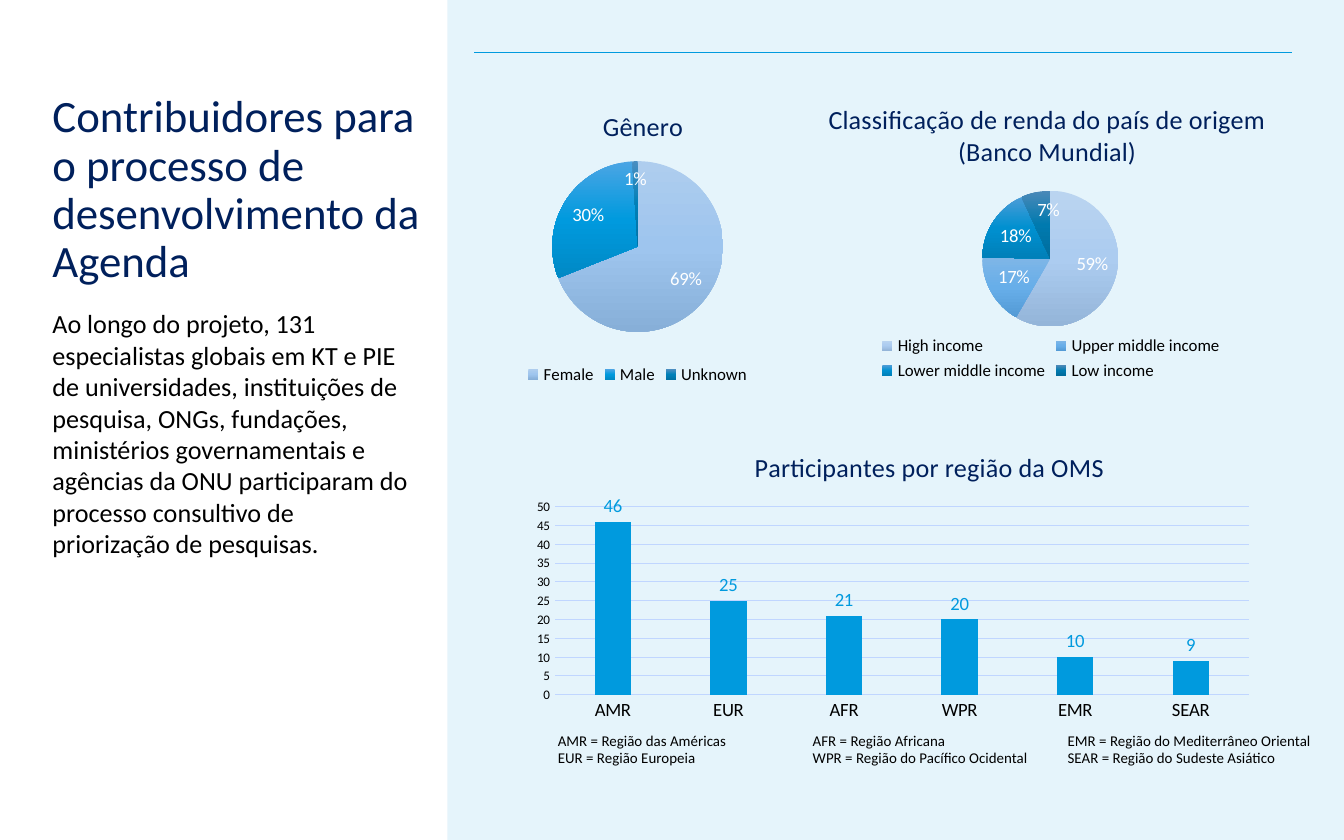
import pptx
import pptx.chart.data
import pptx.dml.color
import pptx.enum.chart
import pptx.enum.shapes
import pptx.enum.text
import pptx.oxml
import pptx.oxml.ns
import pptx.util
from lxml import etree

Inches = pptx.util.Inches
Pt = pptx.util.Pt
RGBColor = pptx.dml.color.RGBColor
XL = pptx.enum.chart
qn = pptx.oxml.ns.qn

FONT = "Calibri"
WHITE = RGBColor(0xFF, 0xFF, 0xFF)
BLACK = RGBColor(0, 0, 0)
NAVY = RGBColor(0x00, 0x20, 0x5C)
BLUE = RGBColor(0x00, 0x9A, 0xDE)
PALE = RGBColor(0xE5, 0xF4, 0xFB)
GRID = RGBColor(0xC0, 0xD6, 0xFF)

# Slice gradients: top, middle and bottom colour
GENDER_FILLS = [("AECDEE", "9EC5EE", "87AFD8"), ("4BA5E4", "009ADE", "0089C5"),
                ("4B8EC1", "0080B8", "0071A4")]
INCOME_FILLS = [("BAD4F0", "ACCCF0", "94B5D9"), ("7FB6E7", "67AEE9", "549BD6"),
                ("4B9CD7", "0090D0", "0080B9"), ("4B89B8", "007AAF", "006C9C")]
REGIONS = ["AMR = Região das Américas", "EUR = Região Europeia",
           "AFR = Região Africana", "WPR = Região do Pacífico Ocidental",
           "EMR = Região do Mediterrâneo Oriental", "SEAR = Região do Sudeste Asiático"]


def set_font(font, size, color):
    font.name, font.size, font.bold = FONT, Pt(size), False
    font.color.rgb = color


def place(sp, box):
    sp.left, sp.top, sp.width, sp.height = (Inches(v) for v in box)


def prepare_frame(tf):
    tf.margin_left = tf.margin_right = tf.margin_top = tf.margin_bottom = 0
    tf.word_wrap = True
    tf.auto_size = pptx.enum.text.MSO_AUTO_SIZE.NONE
    tf.vertical_anchor = pptx.enum.text.MSO_ANCHOR.TOP


def fill_placeholder(sp, box, text, size, color):
    place(sp, box)
    tf = sp.text_frame
    tf.text = text
    prepare_frame(tf)
    p = tf.paragraphs[0]
    p.alignment = pptx.enum.text.PP_ALIGN.LEFT
    p.space_before = Pt(0)
    set_font(p.runs[0].font, size, color)
    return p


def add_backdrop(s, box):
    s.background.fill.solid()
    s.background.fill.fore_color.rgb = PALE
    # White panel, sent behind the placeholders
    sp = s.shapes.add_shape(pptx.enum.shapes.MSO_SHAPE.RECTANGLE, *(Inches(v) for v in box))
    sp.shadow.inherit = False
    sp.fill.solid()
    sp.fill.fore_color.rgb = WHITE
    sp.line.fill.background()
    s.shapes._spTree.insert(2, sp._element)
    # Rule above the charts
    rule = s.shapes.add_connector(pptx.enum.shapes.MSO_CONNECTOR.STRAIGHT,
                                  Inches(3.53), Inches(0.39), Inches(9.61), Inches(0.39))
    rule.line.color.rgb = BLUE
    rule.line.width = Pt(0.5)
    etree.SubElement(rule._element.spPr, qn("a:effectLst"))


def add_intro(s, left):
    title = fill_placeholder(s.shapes.title, (left, 0.7, 2.85, 2.04),
                             "Contribuidores para o processo de desenvolvimento da Agenda",
                             24, NAVY)
    title.line_spacing = 0.9
    body = fill_placeholder(
        s.placeholders[1], (left, 2.29, 2.65, 2.03),
        "Ao longo do projeto, 131 especialistas globais em KT e PIE de universidades, "
        "instituições de pesquisa, ONGs, fundações, ministérios governamentais e agências "
        "da ONU participaram do processo consultivo de priorização de pesquisas.", 14, BLACK)
    body.space_after = Pt(10)


def layout_xml(box, parts, inner=False):
    """Manual chart layout; parts holds x, y and optionally w, h in inches."""
    left, top, width, height = box
    x, y = parts[:2]
    values = {"x": (x - left) / width, "y": (y - top) / height}
    if inner:
        values.update(w=parts[2] / width, h=parts[3] / height)
    layout = etree.Element(qn("c:layout"))
    manual = etree.SubElement(layout, qn("c:manualLayout"))
    if inner:
        etree.SubElement(manual, qn("c:layoutTarget")).set("val", "inner")
    for axis in "xy":
        etree.SubElement(manual, qn(f"c:{axis}Mode")).set("val", "edge")
    for name, value in values.items():
        etree.SubElement(manual, qn(f"c:{name}")).set("val", f"{value:.4f}")
    return layout


def add_chart(s, box, kind, title, title_at, plot, cats, vals):
    data = pptx.chart.data.CategoryChartData()
    data.categories = cats
    data.add_series("Series 1", vals)
    chart = s.shapes.add_chart(kind, *(Inches(v) for v in box), data).chart
    set_font(chart.font, 10, NAVY)
    chart.has_title = True
    tf = chart.chart_title.text_frame
    tf.text = title
    set_font(tf.paragraphs[0].runs[0].font, 14, NAVY)

    # Fixed places for the title and the plot
    title_el = chart.chart_title._element
    plot_el = chart._chartSpace.chart.plotArea
    for el in (title_el, plot_el):
        for old in el.findall(qn("c:layout")):
            el.remove(old)
    title_el.find(qn("c:tx")).addnext(layout_xml(box, title_at))
    plot_el.insert(0, layout_xml(box, plot, inner=True))
    return chart


def set_labels(chart, position, color, number_format):
    plot = chart.plots[0]
    plot.has_data_labels = True
    labels = plot.data_labels
    labels.show_value = True
    labels.number_format = number_format
    labels.number_format_is_linked = False
    labels.position = position
    set_font(labels.font, 10, color)


def gradient_fill(point, colors):
    stops = "".join(f'<a:gs pos="{i * 50000}"><a:srgbClr val="{c}"/></a:gs>'
                    for i, c in enumerate(colors))
    grad = pptx.oxml.parse_xml(
        f'<a:gradFill {pptx.oxml.ns.nsdecls("a")} rotWithShape="1"><a:gsLst>{stops}</a:gsLst>'
        '<a:lin ang="5400000" scaled="0"/></a:gradFill>')
    point.format.line.fill.background()
    point.format._element.get_or_add_spPr().insert(0, grad)


def add_pie(s, box, title, title_at, plot, cats, vals, fills):
    chart = add_chart(s, box, XL.XL_CHART_TYPE.PIE, title, title_at, plot, cats, vals)
    set_labels(chart, XL.XL_LABEL_POSITION.INSIDE_END, WHITE, '0"%"')
    for i, colors in enumerate(fills):
        gradient_fill(chart.plots[0].series[0].points[i], colors)
    chart.has_legend = True
    chart.legend.position = XL.XL_LEGEND_POSITION.BOTTOM
    chart.legend.include_in_layout = False
    set_font(chart.legend.font, 9, BLACK)


def add_region_bars(s, box):
    chart = add_chart(s, box, XL.XL_CHART_TYPE.COLUMN_CLUSTERED,
                      "Participantes por região da OMS", (5.58, 3.31),
                      (4.13, 3.77, 5.16, 1.4),
                      ["AMR", "EUR", "AFR", "WPR", "EMR", "SEAR"], [46, 25, 21, 20, 10, 9])
    chart.has_legend = False
    set_labels(chart, XL.XL_LABEL_POSITION.OUTSIDE_END, BLUE, "0")
    plot = chart.plots[0]
    plot.gap_width, plot.overlap, plot.vary_by_categories = 219, -27, False
    fill = plot.series[0].format.fill
    fill.solid()
    fill.fore_color.rgb = BLUE
    # Axes
    cat, val = chart.category_axis, chart.value_axis
    for axis, size in ((cat, 10), (val, 7)):
        axis.major_tick_mark = axis.minor_tick_mark = XL.XL_TICK_MARK.NONE
        set_font(axis.tick_labels.font, size, BLACK)
    val.minimum_scale, val.maximum_scale, val.major_unit = 0, 50, 5
    val.format.line.fill.background()
    for line, width in ((cat.format.line, 0.75), (val.major_gridlines.format.line, 0.5)):
        line.color.rgb = GRID
        line.width = Pt(width)


def add_region_key(s, box):
    tf = s.shapes.add_textbox(*(Inches(v) for v in box)).text_frame
    tf.text = "\n".join(REGIONS)
    prepare_frame(tf)
    tf._txBody.bodyPr.set("numCol", "3")
    for p in tf.paragraphs:
        set_font(p.runs[0].font, 8, BLACK)


def main():
    prs = pptx.Presentation()
    prs.slide_width, prs.slide_height = Inches(10), Inches(6.25)
    s = prs.slides.add_slide(prs.slide_layouts[0])
    add_backdrop(s, (0, 0, 3.33, 6.25))
    add_intro(s, 0.39)
    add_pie(s, (3.56, 0.61, 2.37, 2.29), "Gênero", (4.45, 0.77), (4.11, 1.2, 1.27, 1.27),
            ["Female", "Male", "Unknown"], [69, 30, 1], GENDER_FILLS)
    add_pie(s, (5.71, 0.58, 4.22, 2.29),
            "Classificação de renda do país de origem (Banco Mundial)", (6.13, 0.72),
            (7.31, 1.42, 1.01, 1.01),
            ["High income", "Upper middle income", "Lower middle income", "Low income"],
            [59, 17, 18, 7], INCOME_FILLS)
    add_region_bars(s, (3.89, 3.24, 5.52, 2.17))
    add_region_key(s, (4.15, 5.44, 5.69, 0.33))
    prs.save("out.pptx")


if __name__ == "__main__":
    main()
